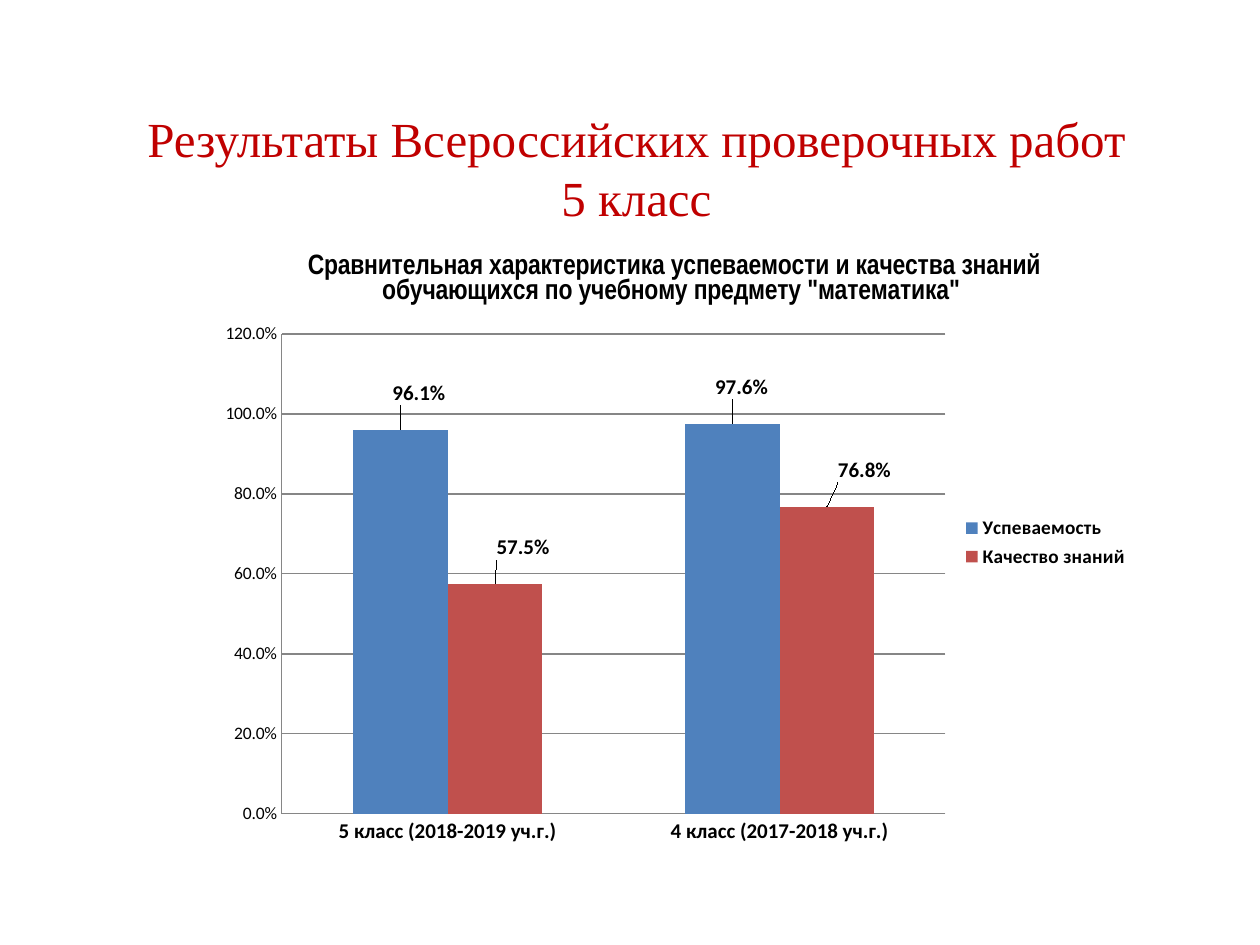
from lxml import etree
from pptx import Presentation
from pptx.chart.data import CategoryChartData
from pptx.dml.color import RGBColor
from pptx.enum.chart import XL_CHART_TYPE as ChartType, XL_LABEL_POSITION as LabelPos
from pptx.enum.chart import XL_LEGEND_POSITION as LegendPos, XL_TICK_MARK as Tick
from pptx.enum.text import MSO_ANCHOR, PP_ALIGN
from pptx.oxml.ns import qn
from pptx.util import Cm, Pt

RED_TITLE = RGBColor(0xC0, 0x00, 0x00)
BLACK = RGBColor(0x00, 0x00, 0x00)
GRAY = RGBColor(0x86, 0x86, 0x86)
BLUE = RGBColor(0x4F, 0x81, 0xBD)
RED = RGBColor(0xC0, 0x50, 0x4D)


def style(font, size, bold=False, name="Calibri", color=BLACK):
    font.size, font.bold, font.name = Pt(size), bold, name
    font.color.rgb = color


def make_layout(**settings):
    """Return a c:layout element with the given manual settings."""
    layout = etree.Element(qn("c:layout"))
    manual = etree.SubElement(layout, qn("c:manualLayout"))
    for key, value in settings.items():
        etree.SubElement(manual, qn(f"c:{key}")).set("val", str(value))
    return layout


prs = Presentation()
prs.slide_width, prs.slide_height = Cm(25.4), Cm(19.05)
slide = prs.slides.add_slide(prs.slide_layouts[5])

# Heading
heading = slide.shapes.title
heading.left, heading.top = Cm(1.4), Cm(1.78)
heading.width, heading.height = Cm(22.86), Cm(3.18)
frame = heading.text_frame
frame.word_wrap = True
frame.vertical_anchor = MSO_ANCHOR.MIDDLE
paragraph = frame.paragraphs[0]
paragraph.alignment = PP_ALIGN.CENTER
for index, line in enumerate(["Результаты Всероссийских проверочных работ", "5 класс"]):
    if index:
        paragraph.add_line_break()
    run = paragraph.add_run()
    run.text = line
    style(run.font, 28, name="Times New Roman", color=RED_TITLE)

# Comparison of the two school years
# name, values, colour, sideways shift of each label
results = [
    ("Успеваемость", (0.961, 0.976), BLUE, (0.02, 0.01)),
    ("Качество знаний", (0.575, 0.768), RED, (0.03, 0.04)),
]
data = CategoryChartData(number_format="0.0%")
data.categories = ["5 класс (2018-2019 уч.г.)", "4 класс (2017-2018 уч.г.)"]
for name, values, _, _ in results:
    data.add_series(name, values)
chart = slide.shapes.add_chart(
    ChartType.COLUMN_CLUSTERED, Cm(4.17), Cm(4.57), Cm(18.85), Cm(12.73), data
).chart
style(chart.font, 10)

chart.has_title = True
chart.chart_title.include_in_layout = False
run = chart.chart_title.text_frame.paragraphs[0].add_run()
run.text = (
    "Сравнительная характеристика успеваемости и качества знаний "
    'обучающихся по учебному предмету "математика" '
)
style(run.font, 16, bold=True, name="Arial Narrow")

chart.has_legend = True
chart.legend.position = LegendPos.RIGHT
chart.legend.include_in_layout = False
style(chart.legend.font, 11, bold=True)

for axis in (chart.category_axis, chart.value_axis):
    axis.major_tick_mark = axis.minor_tick_mark = Tick.NONE
    axis.format.line.color.rgb = GRAY
style(chart.category_axis.tick_labels.font, 12, bold=True)
percent_axis = chart.value_axis
percent_axis.minimum_scale, percent_axis.maximum_scale = 0, 1.2
percent_axis.major_unit = 0.2
percent_axis.tick_labels.number_format = "0.0%"
percent_axis.tick_labels.number_format_is_linked = False
percent_axis.has_major_gridlines = True
percent_axis.major_gridlines.format.line.color.rgb = GRAY

plot = chart.plots[0]
plot.gap_width, plot.overlap = 150, 0
plot.vary_by_categories = False
for series, (_, values, color, shifts) in zip(plot.series, results):
    series.format.fill.solid()
    series.format.fill.fore_color.rgb = color
    labels = series.data_labels
    labels.show_value = True
    labels.number_format, labels.number_format_is_linked = "0.0%", False
    style(labels.font, 12, bold=True)
    for index, shift in enumerate(shifts):
        label = series.points[index].data_label
        style(label.font, 12, bold=True)
        label.position = LabelPos.OUTSIDE_END
    for label_xml, shift in zip(labels._element.findall(qn("c:dLbl")), shifts):
        label_xml.find(qn("c:idx")).addnext(make_layout(x=shift, y=-0.03))

plot_area = chart._chartSpace.chart.plotArea
for old_layout in plot_area.findall(qn("c:layout")):
    plot_area.remove(old_layout)
plot_area.insert(0, make_layout(
    layoutTarget="inner", xMode="edge", yMode="edge", x=0.08, y=0.17, w=0.71, h=0.76
))

prs.save("out.pptx")
